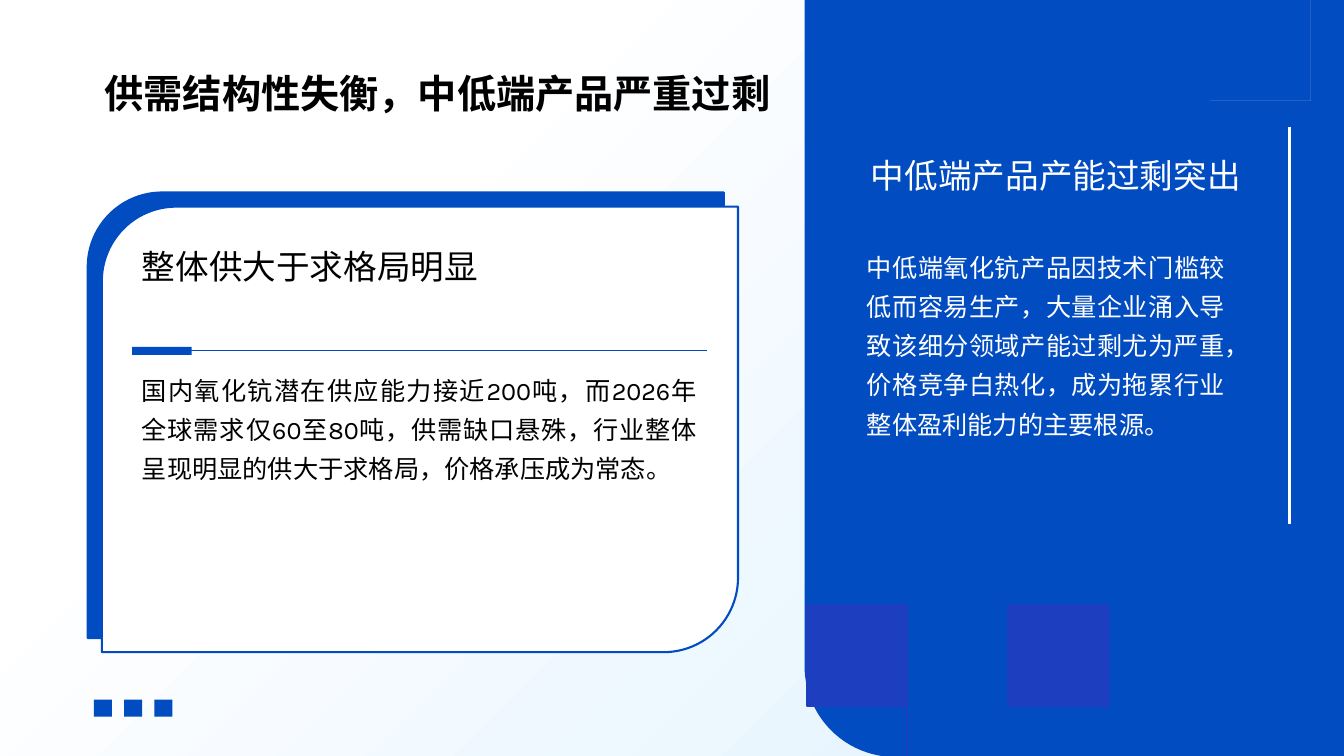
from copy import deepcopy

from lxml import etree
from pptx import Presentation
from pptx.dml.color import RGBColor
from pptx.enum import shapes, text
from pptx.oxml.ns import qn
from pptx.util import Inches, Pt

HUES = {"blue": "004CC0", "leaf": "1D3EBF", "white": "FFFFFF",
        "black": "000000", "sky": "DDF0FE"}
FONT = "Karla"
STOPS = [(0, "white"), (0.28, "white"), (1, "sky")]

# text, box, format
TEXTS = [
    ("供需结构性失衡，中低端产品严重过剩", (0.94, 0.64, 11.1, 0.57),
     dict(size=28, hue="black", bold=True)),
    ("整体供大于求格局明显", (1.31, 2.38, 5.7, 0.51),
     dict(size=24, hue="black", mid=True, just=True)),
    ("国内氧化钪潜在供应能力接近200吨，而2026年全球需求仅60至80吨，供需缺口悬殊，"
     "行业整体呈现明显的供大于求格局，价格承压成为常态。", (1.31, 3.58, 5.7, 1.27),
     dict(size=18, hue="black", just=True, lead=1.3)),
    ("中低端产品产能过剩突出", (8.54, 1.49, 4.42, 0.5),
     dict(size=24, hue="white", mid=True, just=True)),
    ("中低端氧化钪产品因技术门槛较低而容易生产，大量企业涌入导致该细分领域产能过剩尤为严重，"
     "价格竞争白热化，成为拖累行业整体盈利能力的主要根源。", (8.5, 2.36, 3.75, 2.05),
     dict(size=18, hue="white", just=True, lead=1.3)),
]

CARD = (6.31, 4.42)
CARDS = [(0.87, 1.91, "blue"), (1.01, 2.05, "white")]
PANEL = (7.99, 0, 5.34, 7.5)
DOTS = dict(left=0.93, top=6.94, step=0.3, count=3)
BAR = (1.31, 3.44, 0.59, 0.08)
AXIS = 12.79
STARS = [(0.78, 0.33, 0.32)] + [(5.7 + 0.575 * i, 0.16, 0.15) for i in range(3)]
LEAF = (1.48, 1.47)
LEAVES = [(7.99, 6.03, False), (9.52, 5.99, True)]
# leaf outline as shares of its box: one half, the other is its half turn
EDGE = [(0.4, 0), (0.74, -0.01), (1.01, 0.3), (1, 0.6)]

deck = Presentation()
deck.slide_width, deck.slide_height = Inches(13.33), Inches(7.5)
page = deck.slides.add_slide(deck.slide_layouts[6])
KIND = shapes.MSO_SHAPE


def rgb(hue):
    return RGBColor.from_string(HUES[hue])


def paint(shape, hue, line=None):
    shape.shadow.inherit = False
    shape.fill.solid()
    shape.fill.fore_color.rgb = rgb(hue)
    if line:
        shape.line.color.rgb = rgb(line)
        shape.line.width = Pt(1.5)
    else:
        shape.line.fill.background()
    return shape


def block(kind, box, hue, line=None, adj=()):
    shape = page.shapes.add_shape(kind, *map(Inches, box))
    for i, val in enumerate(adj):
        shape.adjustments[i] = val
    return paint(shape, hue, line)


def rule(start, end, hue, width):
    line = page.shapes.add_connector(
        shapes.MSO_CONNECTOR.STRAIGHT, *map(Inches, start + end))
    line.line.color.rgb = rgb(hue)
    line.line.width = Pt(width)
    etree.SubElement(line._element.spPr, qn("a:effectLst"))
    return line


def curve(a, b, c, d, steps=16):
    """Points along a cubic Bezier curve."""
    def at(t):
        s = 1 - t
        return tuple(s**3 * p + 3 * s * s * t * q + 3 * s * t * t * r + t**3 * v
                     for p, q, r, v in zip(a, b, c, d))
    return [at(i / steps) for i in range(steps + 1)]


def outline(points, hue, line=None):
    pen = page.shapes.build_freeform(*points[0], scale=Inches(1))
    pen.add_line_segments(points[1:], close=True)
    return paint(pen.convert_to_shape(), hue, line)


def star(mid, wide, high):
    tips = [(-1, 0), (0, -1), (1, 0), (0, 1)]
    points = []
    for i, a in enumerate(tips):
        b = tips[(i + 1) % 4]
        points += curve(a, (a[0] / 2, a[1] / 2), (b[0] / 2, b[1] / 2), b)
    outline([(AXIS + x * wide, mid + y * high) for x, y in points], "white")


def leaf(left, top, flip):
    half = curve(*EDGE)
    points = [(0, 0)] + half + [(1, 1)] + [(1 - x, 1 - y) for x, y in half]
    outline([(left + (1 - x if flip else x) * LEAF[0], top + y * LEAF[1])
             for x, y in points], "leaf", "leaf")


def write(words, box, size, hue, bold=False, mid=False, just=False, lead=None):
    frame = page.shapes.add_textbox(*map(Inches, box)).text_frame
    frame.word_wrap = True
    frame.auto_size = text.MSO_AUTO_SIZE.SHAPE_TO_FIT_TEXT
    if mid:
        frame.vertical_anchor = text.MSO_ANCHOR.MIDDLE
    para = frame.paragraphs[0]
    if just:
        para.alignment = text.PP_ALIGN.JUSTIFY
    if lead:
        para.line_spacing = lead
    run = para.add_run()
    run.text = words
    for key, val in dict(name=FONT, size=Pt(size), bold=bold).items():
        setattr(run.font, key, val)
    run.font.color.rgb = rgb(hue)


def backdrop():
    fill = page.background.fill
    fill.gradient()
    fill.gradient_angle = 315
    stops = page._element.xpath(".//a:gsLst")[0]
    stops.insert(1, deepcopy(stops[0]))
    for stop, (place, hue) in zip(fill.gradient_stops, STOPS):
        stop.position = place
        stop.color.rgb = rgb(hue)


backdrop()
for left, top, hue in CARDS:
    block(KIND.ROUND_2_DIAG_RECTANGLE, (left, top) + CARD, hue, "blue", (0.167, 0))
for i in range(DOTS["count"]):
    block(KIND.RECTANGLE,
          (DOTS["left"] + i * DOTS["step"], DOTS["top"], 0.18, 0.17), "blue")
panel = block(KIND.ROUND_1_RECTANGLE, PANEL, "blue", "blue", (0.167,))
panel.rotation = 180

bar = block(KIND.RECTANGLE, BAR, "blue")
rule((1.31, 3.48), (7.01, 3.48), "blue", 1).begin_connect(bar, 1)
for spot in STARS:
    star(*spot)
rule((AXIS, 1.26), (AXIS, 5.2), "white", 1.5)
for spot in LEAVES:
    leaf(*spot)
for words, box, form in TEXTS:
    write(words, box, **form)

deck.save("out.pptx")
